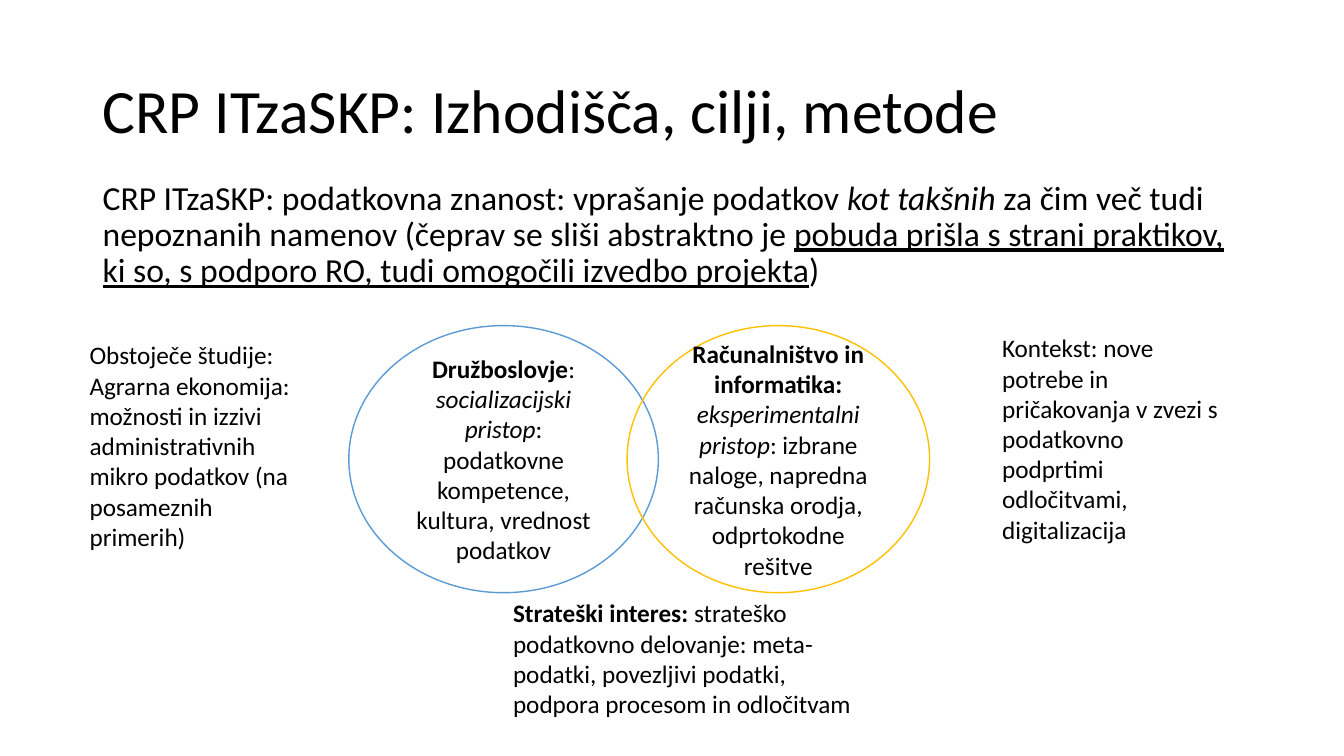
from dataclasses import dataclass
from pptx import Presentation
from pptx.dml.color import RGBColor
from pptx.enum.shapes import MSO_SHAPE
from pptx.enum.text import MSO_ANCHOR, MSO_AUTO_SIZE, PP_ALIGN
from pptx.util import Pt

PX = 9144
OVAL = MSO_SHAPE.OVAL
TOP, MIDDLE = MSO_ANCHOR.TOP, MSO_ANCHOR.MIDDLE
LEFT, CENTER = PP_ALIGN.LEFT, PP_ALIGN.CENTER
GROW, FIXED = MSO_AUTO_SIZE.SHAPE_TO_FIT_TEXT, MSO_AUTO_SIZE.NONE


@dataclass(frozen=True)
class Theme:
    font: str = "Calibri"
    ink: str = "000000"
    paper: str = "FFFFFF"
    blue: str = "5B9BD5"
    gold: str = "FFC000"
    title: int = 44
    lead: int = 24
    note: int = 18
    line: int = 1


THEME = Theme()
BOLD, ITALIC, UNDER = {"bold": True}, {"italic": True}, {"underline": True}


def color(code):
    return RGBColor.from_string(code)


def scale(box):
    return [side * PX for side in box]


def apply(target, values):
    for name, value in values.items():
        setattr(target, name, value)


def write(shape, runs, size, frame=None, para=None):
    text = shape.text_frame
    apply(text, {"word_wrap": True, "auto_size": FIXED,
                 "vertical_anchor": TOP, **(frame or {})})
    line = text.paragraphs[0]
    apply(line, {"alignment": LEFT, **(para or {})})
    for words, style in runs:
        run = line.add_run()
        run.text = words
        apply(run.font, {"name": THEME.font, "size": Pt(size), **style})
        run.font.color.rgb = color(THEME.ink)


def title(slide, box, words):
    shape = slide.shapes.add_textbox(*scale(box))
    write(shape, [(words, {})], THEME.title,
          {"vertical_anchor": MIDDLE}, {"line_spacing": 0.9})


def lead(slide, box, runs):
    shape = slide.shapes.add_textbox(*scale(box))
    shape.fill.solid()
    shape.fill.fore_color.rgb = color(THEME.paper)
    write(shape, runs, THEME.lead, None,
          {"line_spacing": 0.9, "space_before": Pt(10)})


def field(slide, box, runs, edge, fill=None):
    shape = slide.shapes.add_shape(OVAL, *scale(box))
    shape.shadow.inherit = False
    if fill:
        shape.fill.solid()
        shape.fill.fore_color.rgb = color(fill)
    else:
        shape.fill.background()
    shape.line.color.rgb = color(edge)
    shape.line.width = Pt(THEME.line)
    write(shape, runs, THEME.note,
          {"vertical_anchor": MIDDLE}, {"alignment": CENTER})


def venn(slide, box):
    left, top, width, height = box
    wide, slim = 307, 300
    field(slide, (left, top, wide, height), [
        ("Družboslovje", BOLD),
        (": ", {}),
        ("socializacijski pristop", ITALIC),
        (": podatkovne kompetence, kultura, vrednost podatkov", {}),
    ], THEME.blue, THEME.paper)
    field(slide, (left + width - slim, top, slim, height), [
        ("Računalništvo in informatika: ", BOLD),
        ("eksperimentalni pristop", ITALIC),
        (": izbrane naloge, napredna računska orodja, "
         "odprtokodne rešitve", {}),
    ], THEME.gold)


def note(slide, box, runs):
    shape = slide.shapes.add_textbox(*scale(box))
    write(shape, runs, THEME.note, {"auto_size": GROW})


def main():
    deck = Presentation()
    apply(deck, {"slide_width": 1333 * PX, "slide_height": 750 * PX})
    slide = deck.slides.add_slide(deck.slide_layouts[6])
    title(slide, (92, 40, 1150, 145), "CRP ITzaSKP: Izhodišča, cilji, metode")
    lead(slide, (92, 175, 1150, 476), [
        ("CRP ITzaSKP: podatkovna znanost: vprašanje podatkov ", {}),
        ("kot takšnih ", ITALIC),
        ("za čim več tudi nepoznanih namenov "
         "(čeprav se sliši abstraktno je ", {}),
        ("pobuda prišla s strani praktikov, ki so, s podporo RO, "
         "tudi omogočili izvedbo projekta", UNDER),
        (")", {}),
    ])
    venn(slide, (346, 323, 576, 265))
    note(slide, (499, 588, 373, 131), [
        ("Strateški interes: ", BOLD),
        ("strateško podatkovno delovanje: meta-podatki, povezljivi podatki, "
         "podpora procesom in odločitvam", {}),
    ])
    note(slide, (79, 332, 236, 222), [
        ("Obstoječe študije: Agrarna ekonomija: možnosti in izzivi "
         "administrativnih mikro podatkov (na posameznih primerih)", {}),
    ])
    note(slide, (984, 325, 245, 222), [
        ("Kontekst: nove potrebe in pričakovanja v zvezi s podatkovno "
         "podprtimi odločitvami, digitalizacija", {}),
    ])
    deck.save("out.pptx")


if __name__ == "__main__":
    main()
